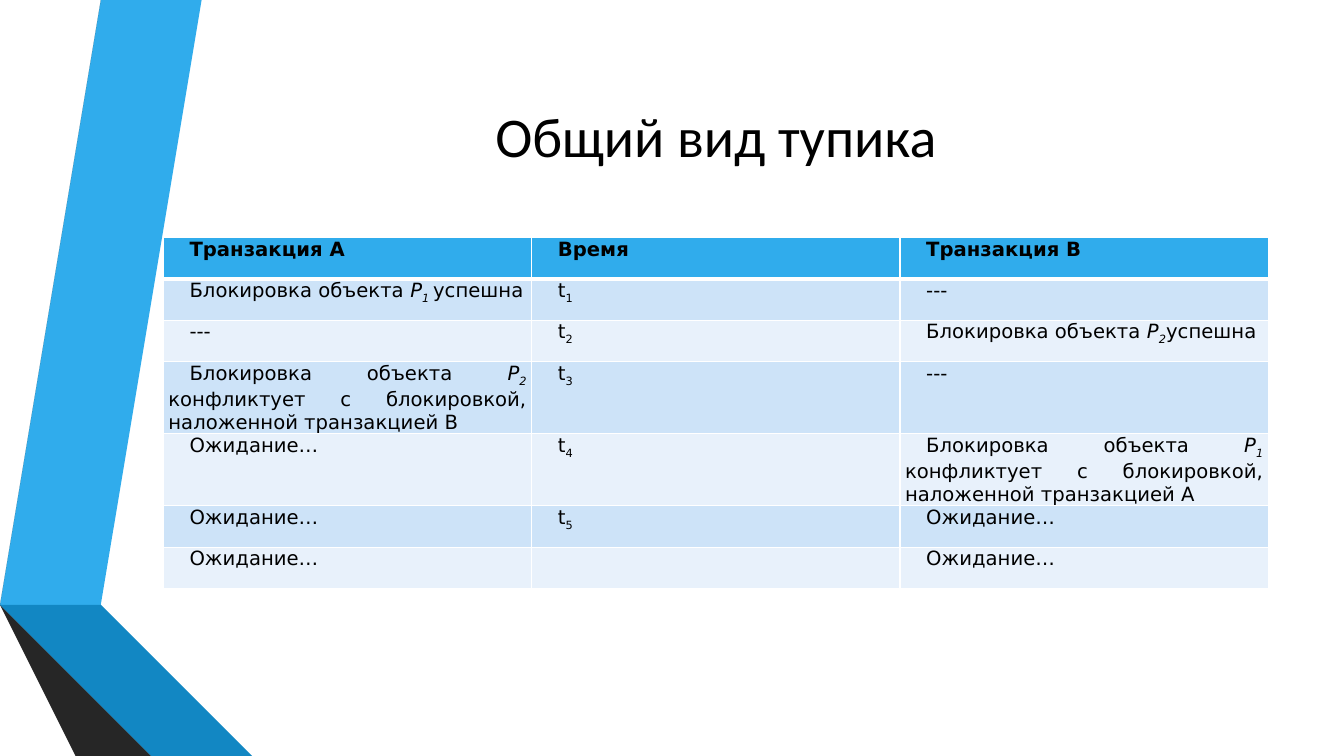
from pptx import Presentation
from pptx.dml.color import RGBColor
from pptx.enum import text
from pptx.oxml import parse_xml
from pptx.oxml.ns import nsdecls
from pptx import util as u

# Content: a cell is a list of runs (wording, style); i = italic, s = subscript
TITLE = "Общий вид тупика"
NONE = [("---", "")]
WAIT = [("Ожидание…", "")]


def lock(obj, result):
    return [("Блокировка объекта ", ""), ("P", "i"), (obj, "is"), (result, "")]


def moment(n):
    return [("t", ""), (str(n), "s")]


CONFLICT = "конфликтует с блокировкой, наложенной транзакцией "
ROWS = [
    [[("Транзакция A", "b")], [("Время", "b")], [("Транзакция B", "b")]],
    [lock("1 ", "успешна"), moment(1), NONE],
    [NONE, moment(2), lock("2", "успешна")],
    [lock("2 ", CONFLICT + "B"), moment(3), NONE],
    [WAIT, moment(4), lock("1 ", CONFLICT + "A")],
    [WAIT, moment(5), WAIT],
    [WAIT, [], WAIT],
]

# Folded ribbons at the left edge: colour and corner points in inches
RIBBONS = [
    ("30ACEC", [(0.5, 5.78), (0.77, 5.83), (1.73, 0), (1.45, 0)]),
    ("595959", [(1.39, 0), (1.11, 0), (0.16, 5.73), (0.44, 5.77)]),
    ("262626", [(0.16, 5.73), (1.45, 7.5), (1.51, 7.5)]),
    ("0C5A82", [(0.5, 5.79), (2.08, 7.5), (2.14, 7.5)]),
    ("1287C3", [(0.5, 5.78), (2.14, 7.5), (2.83, 7.5), (0.77, 5.83)]),
    ("404040", [(2.02, 7.5), (0.48, 5.83), (0.44, 5.77), (0.16, 5.73), (1.51, 7.5)]),
]

HEADER, BANDS = "30ACEC", ("E8F1FB", "CDE3F8")
LEFT, WIDTH = 1.62, 10.96
TITLE_TOP, TITLE_H = 0.75, 1.18
TABLE_TOP, ROW_H = 2.36, 0.41


def color(value):
    return RGBColor.from_string(value)


def paint(fill, value):
    fill.solid()
    fill.fore_color.rgb = color(value)


def add_run(p, wording, style, font, size):
    r = p.add_run()
    r.text = wording
    r.font.name, r.font.size = font, u.Pt(size)
    r.font.color.rgb = color("000000")
    r.font.bold, r.font.italic = "b" in style, "i" in style
    if "s" in style:
        r.font._element.set("baseline", "-25000")


def add_border(cell, side, points):
    cell._tc.get_or_add_tcPr().append(parse_xml(
        f'<a:ln{side} {nsdecls("a")} w="{u.Pt(points)}"><a:solidFill>'
        f'<a:srgbClr val="FFFFFF"/></a:solidFill></a:ln{side}>'))


def fill_cell(cell, row, runs):
    cell.margin_left = cell.margin_right = cell.margin_top = cell.margin_bottom = 0
    for side in "LRTB":
        under_header = (side, row) in (("B", 0), ("T", 1))
        add_border(cell, side, 3 if under_header else 1)
    paint(cell.fill, BANDS[row % 2] if row else HEADER)
    if not runs:
        return
    p = cell.text_frame.paragraphs[0]
    p.alignment = text.PP_ALIGN.JUSTIFY
    p.space_before, p.space_after = u.Pt(3), u.Pt(8.2)
    pPr = p._p.get_or_add_pPr()
    for name, inches in (("marL", 0.05), ("marR", 0.05), ("indent", 0.21)):
        pPr.set(name, str(u.Inches(inches)))
    for wording, style in runs:
        add_run(p, wording, style, "DejaVu Sans", 14)


prs = Presentation()
prs.slide_width, prs.slide_height = u.Inches(13.33), u.Inches(7.5)
s = prs.slides.add_slide(prs.slide_layouts[5])

# Ribbons, behind everything else
ribbons = s.shapes.add_group_shape()
for value, (start, *rest) in RIBBONS:
    outline = ribbons.shapes.build_freeform(*start, scale=u.Inches(1))
    outline.add_line_segments(rest, close=True)
    sp = outline.convert_to_shape()
    sp.shadow.inherit = False
    paint(sp.fill, value)
    sp.line.fill.background()

# Title
title = s.shapes.title
s.shapes._spTree.append(title._element)
title.left, title.top = u.Inches(LEFT), u.Inches(TITLE_TOP)
title.width, title.height = u.Inches(WIDTH), u.Inches(TITLE_H)
tf = title.text_frame
tf.vertical_anchor = text.MSO_ANCHOR.MIDDLE
tf.auto_size = text.MSO_AUTO_SIZE.NONE
tf.paragraphs[0].alignment = text.PP_ALIGN.CENTER
add_run(tf.paragraphs[0], TITLE, "", "Calibri", 40)

# Table: equal columns, rows grow with their text
table = s.shapes.add_table(
    len(ROWS), len(ROWS[0]), u.Inches(LEFT), u.Inches(TABLE_TOP),
    u.Inches(WIDTH), u.Inches(ROW_H * len(ROWS))).table
for i, row in enumerate(ROWS):
    for j, runs in enumerate(row):
        fill_cell(table.cell(i, j), i, runs)

prs.save("out.pptx")
